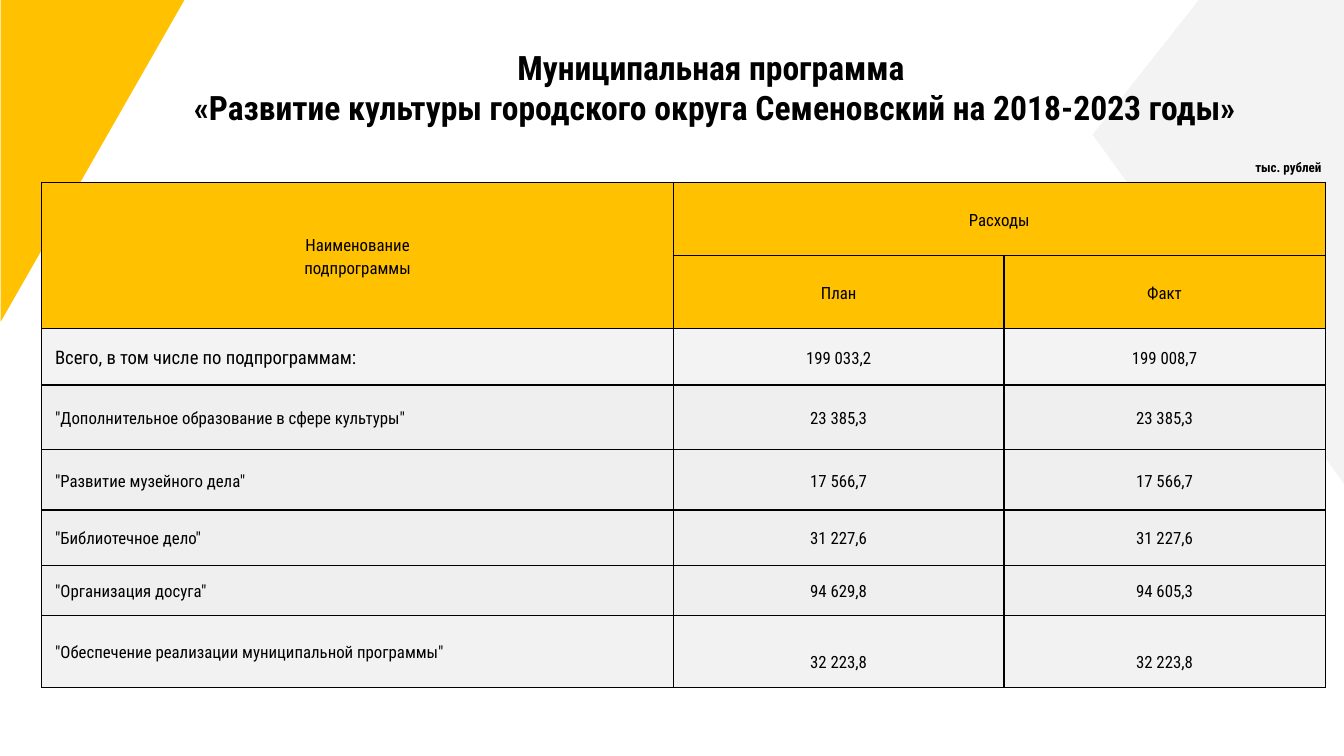
import pptx
import pptx.dml.color
import pptx.enum.shapes
import pptx.enum.text
import pptx.oxml
import pptx.oxml.ns
import pptx.util

Inch = pptx.util.Inches
Pt = pptx.util.Pt
Shape = pptx.enum.shapes.MSO_SHAPE
Align = pptx.enum.text.PP_ALIGN
Anchor = pptx.enum.text.MSO_ANCHOR

WIDE = 10
TALL = WIDE * 9 / 16
FONT = "Roboto Condensed"
GOLD, PALE, GREY, LIGHT = "FFC100", "F3F3F3", "EFEFEF", "F2F2F2"

TITLE = ("Муниципальная программа \v"
         "«Развитие культуры городского округа Семеновский на 2018-2023 годы»")
UNIT = "тыс. рублей"

# Row height, fill, cell texts
ROWS = [
    (0.54, GOLD, ("Наименование\nподпрограммы", "Расходы", "")),
    (0.53, GOLD, ("", "План", "Факт")),
    (0.42, PALE, ("Всего, в том числе по подпрограммам:", "199 033,2", "199 008,7")),
    (0.48, GREY, ('"Дополнительное образование в сфере культуры"', "23 385,3", "23 385,3")),
    (0.45, GREY, ('"Развитие музейного дела"', "17 566,7", "17 566,7")),
    (0.41, GREY, ('"Библиотечное дело"', "31 227,6", "31 227,6")),
    (0.36, GREY, ('"Организация досуга"', "94 629,8", "94 605,3")),
    (0.54, LIGHT, ('"Обеспечение реализации муниципальной программы"',
                   "32 223,8", "32 223,8")),
]
COLS = [4.7, 2.46, 2.39]
HEAD, TOTAL, LAST = 2, 2, len(ROWS) - 1

# Shape, frame, turn, fill, adjustment
DECOR = [
    (Shape.ISOSCELES_TRIANGLE, (6.58, 0.18, 4.97, 1.87), 270, PALE, 0.523),
    (Shape.RIGHT_TRIANGLE, (-0.51, 0.51, 2.4, 1.37), 90, GOLD, None),
]


def color(code):
    return pptx.dml.color.RGBColor.from_string(code)


def paint(item, code):
    item.fill.solid()
    item.fill.fore_color.rgb = color(code)


def put(frame, text, size=9, bold=False, align=Align.LEFT, space=1.0):
    frame.word_wrap = True
    frame.text = text
    for para in frame.paragraphs:
        para.alignment = align
        para.line_spacing = space
        for run in para.runs:
            font = run.font
            font.name, font.size, font.bold = FONT, Pt(size), bold
            font.color.rgb = color("000000")


def pad(item, left, top, right, bottom):
    item.margin_left, item.margin_top = Inch(left), Inch(top)
    item.margin_right, item.margin_bottom = Inch(right), Inch(bottom)


def edge(cell):
    """Draw a thin black line on all four sides of a cell."""
    props = cell._tc.get_or_add_tcPr()
    for side in ("lnL", "lnR", "lnT", "lnB"):
        props.append(pptx.oxml.parse_xml(
            f'<a:{side} {pptx.oxml.ns.nsdecls("a")} w="{Pt(0.75)}">'
            f'<a:solidFill><a:srgbClr val="000000"/></a:solidFill></a:{side}>'))


def decorate(slide):
    for kind, frame, turn, fill, bend in DECOR:
        shape = slide.shapes.add_shape(kind, *map(Inch, frame))
        shape.rotation = turn
        shape.shadow.inherit = False
        shape.line.fill.background()
        paint(shape, fill)
        if bend is not None:
            shape.adjustments[0] = bend


def label(slide, frame, pads, text, **style):
    box = slide.shapes.add_textbox(*map(Inch, frame))
    pad(box.text_frame, *pads)
    put(box.text_frame, text, **style)


def tabulate(slide):
    high = sum(row[0] for row in ROWS)
    table = slide.shapes.add_table(
        len(ROWS), len(COLS), Inch(0.31), Inch(1.36),
        Inch(sum(COLS)), Inch(high)).table
    for col, wide in zip(table.columns, COLS):
        col.width = Inch(wide)
    for r, (tall, fill, texts) in enumerate(ROWS):
        table.rows[r].height = Inch(tall)
        for c, text in enumerate(texts):
            cell = table.cell(r, c)
            name = c == 0 and r >= HEAD
            put(cell.text_frame, text, space=1.15,
                size=10 if name and r == TOTAL else 9,
                align=Align.LEFT if name else Align.CENTER)
            # The last row's figures sit below the middle
            pad(cell, 0.1, 0.25 if r == LAST and c else 0.1, 0.1, 0.1)
            cell.vertical_anchor = Anchor.MIDDLE
            edge(cell)
            paint(cell, fill)
    table.cell(0, 0).merge(table.cell(1, 0))
    table.cell(0, 1).merge(table.cell(0, 2))


def main():
    deck = pptx.Presentation()
    deck.slide_width, deck.slide_height = Inch(WIDE), Inch(TALL)
    slide = deck.slides.add_slide(deck.slide_layouts[6])
    decorate(slide)
    label(slide, (1.11, 0.25, 8.42, 0.79), (0.1, 0.1, 0.1, 0.1), TITLE,
          size=18, bold=True, align=Align.CENTER)
    tabulate(slide)
    label(slide, (9.33, 1.17, 0.65, 0.13), (0.01, 0.02, 0, 0), UNIT,
          size=7, bold=True)
    deck.save("out.pptx")


if __name__ == "__main__":
    main()
